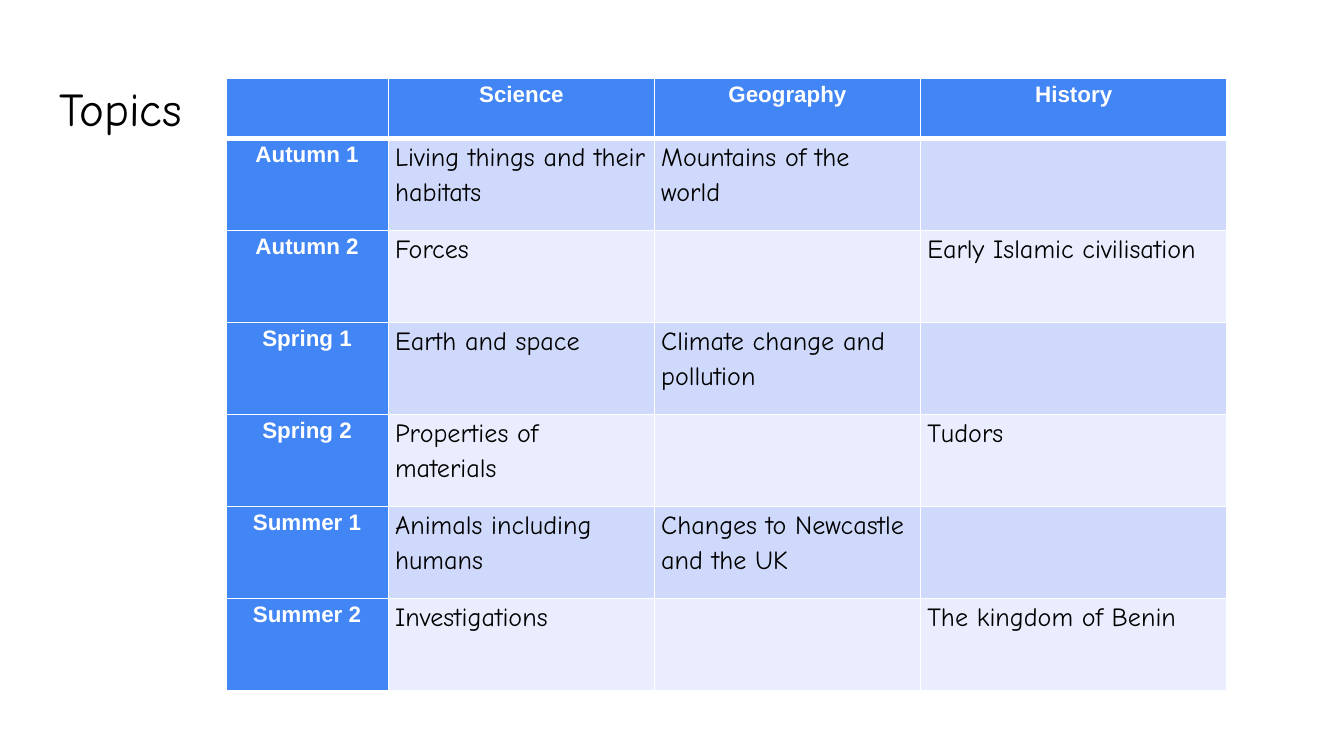
import pptx
import pptx.util
import pptx.dml.color
import pptx.enum.text
import pptx.oxml
import pptx.oxml.ns

Inches = pptx.util.Inches
Pt = pptx.util.Pt
ALIGN = pptx.enum.text.PP_ALIGN

BLUE = "4285F4"
BANDS = ["CFD9FB", "E9EDFD"]
WIDTHS = [1.21, 1.98, 1.98, 2.28]
HIGH = 4.56
HEAD = 0.45

TOPICS = [
    ["", "Science", "Geography", "History"],
    ["Autumn 1", "Living things and their habitats", "Mountains of the world", ""],
    ["Autumn 2", "Forces", "", "Early Islamic civilisation"],
    ["Spring 1", "Earth and space", "Climate change and pollution", ""],
    ["Spring 2", "Properties of materials", "", "Tudors"],
    ["Summer 1", "Animals including humans", "Changes to Newcastle and the UK", ""],
    ["Summer 2", "Investigations", "", "The kingdom of Benin"],
]


def color(code):
    return pptx.dml.color.RGBColor.from_string(code)


def add_run(para, text, face, size, code, bold=False):
    run = para.add_run()
    run.text = text
    run.font.name = face
    run.font.size = Pt(size)
    run.font.bold = bold
    run.font.color.rgb = color(code)


def add_title(slide, text):
    title = slide.shapes.title
    title.left, title.top = Inches(0.34), Inches(0.49)
    title.width, title.height = Inches(9.32), Inches(0.63)
    frame = title.text_frame
    frame.auto_size = pptx.enum.text.MSO_AUTO_SIZE.NONE
    frame.vertical_anchor = pptx.enum.text.MSO_ANCHOR.TOP
    frame.margin_left = frame.margin_right = Inches(0.1)
    frame.margin_top = frame.margin_bottom = Inches(0.1)
    para = frame.paragraphs[0]
    para.alignment = ALIGN.LEFT
    add_run(para, text, "Comic Neue", 25.2, "000000")


def add_border(cell, side, width):
    space = pptx.oxml.ns.nsdecls("a")
    line = pptx.oxml.parse_xml(
        f'<a:ln{side} {space} w="{Pt(width)}"><a:solidFill>'
        f'<a:srgbClr val="FFFFFF"/></a:solidFill></a:ln{side}>'
    )
    cell._tc.get_or_add_tcPr().append(line)


def fill_cell(cell, row, col, text):
    label = row == 0 or col == 0
    thick = {("B", 0), ("T", 1)}
    for side in "LRTB":
        add_border(cell, side, 3 if (side, row) in thick else 1)
    cell.fill.solid()
    cell.fill.fore_color.rgb = color(BLUE if label else BANDS[(row - 1) % 2])
    cell.margin_left = cell.margin_right = Inches(0.05)
    cell.margin_top = cell.margin_bottom = 0
    if text:
        para = cell.text_frame.paragraphs[0]
        para.line_spacing = 1.15
        para.alignment = ALIGN.CENTER if label else ALIGN.LEFT
        if label:
            add_run(para, text, "Arial", 12, "FFFFFF", True)
        else:
            add_run(para, text, "Comic Neue", 14, "000000")


def add_grid(slide, data):
    frame = slide.shapes.add_table(
        len(data), len(WIDTHS), Inches(1.68), Inches(0.58),
        Inches(sum(WIDTHS)), Inches(HIGH),
    )
    table = frame.table
    for col, width in enumerate(WIDTHS):
        table.columns[col].width = Inches(width)
    step = (HIGH - HEAD) / (len(data) - 1)
    for row, texts in enumerate(data):
        table.rows[row].height = Inches(step if row else HEAD)
        for col, text in enumerate(texts):
            fill_cell(table.cell(row, col), row, col, text)


def main():
    deck = pptx.Presentation()
    deck.slide_width, deck.slide_height = Inches(10), Inches(10 * 9 / 16)
    slide = deck.slides.add_slide(deck.slide_layouts[5])
    add_title(slide, "Topics")
    add_grid(slide, TOPICS)
    deck.save("out.pptx")


if __name__ == "__main__":
    main()
